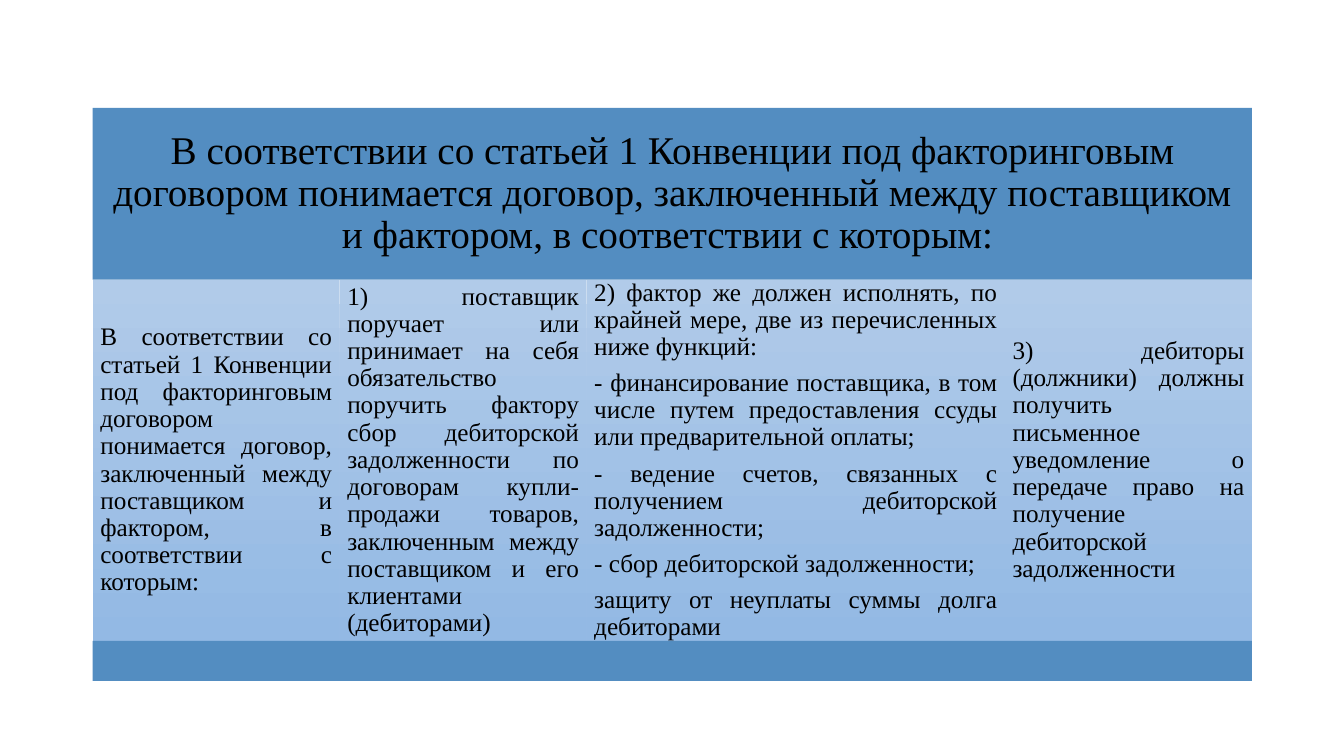
from pptx import Presentation
from pptx.dml.color import RGBColor
from pptx.enum.shapes import MSO_SHAPE
from pptx.enum.text import MSO_ANCHOR, MSO_AUTO_SIZE, PP_ALIGN
from pptx.util import Pt

COLORS = {"band": "538DC1", "column_top": "B1CBE9", "column_bottom": "93B9E4", "text": "000000"}
FONT = "Times New Roman"
LEFT, WIDTH = 66.24, 828
HEADER_TOP, COLUMN_TOP, FOOTER_TOP, FOOTER_BOTTOM = 77, 199.8, 457.7, 486.4

DEFINITION = (
    "В соответствии со статьей 1 Конвенции под факторинговым договором понимается "
    "договор, заключенный между поставщиком и фактором, в соответствии с которым: "
)
# Width and paragraphs of each column
COLUMNS = [
    (176.4, [DEFINITION]),
    (176.4, [
        "1) поставщик поручает или принимает на себя обязательство поручить фактору "
        "сбор дебиторской задолженности по договорам купли-продажи товаров, "
        "заключенным между поставщиком и его клиентами (дебиторами)",
    ]),
    (298.8, [
        "2) фактор же должен исполнять, по крайней мере, две из перечисленных ниже функций: ",
        "- финансирование поставщика, в том числе путем предоставления ссуды "
        "или предварительной оплаты;",
        "- ведение счетов, связанных с получением дебиторской задолженности; ",
        "- сбор дебиторской задолженности;",
        "защиту от неуплаты суммы долга дебиторами",
    ]),
    (176.4, [
        "3) дебиторы (должники) должны получить письменное уведомление о передаче "
        "право на получение дебиторской задолженности",
    ]),
]


def add_block(slide, left, top, width, height):
    shape = slide.shapes.add_shape(
        MSO_SHAPE.RECTANGLE, Pt(left), Pt(top), Pt(width), Pt(height))
    shape.shadow.inherit = False
    shape.line.fill.background()
    return shape


def write_text(shape, paragraphs, size, alignment, margin):
    frame = shape.text_frame
    frame.text = "\n".join(paragraphs)
    frame.word_wrap = True
    frame.auto_size = MSO_AUTO_SIZE.NONE
    frame.vertical_anchor = MSO_ANCHOR.MIDDLE
    frame.margin_left = frame.margin_right = Pt(margin)
    frame.margin_top = frame.margin_bottom = Pt(margin)
    for paragraph in frame.paragraphs:
        paragraph.alignment = alignment
        paragraph.line_spacing = 0.9
        paragraph.space_before = Pt(0)
        paragraph.space_after = Pt(size * 0.35)
        for run in paragraph.runs:
            run.font.name = FONT
            run.font.size = Pt(size)
            run.font.color.rgb = RGBColor.from_string(COLORS["text"])


presentation = Presentation()
presentation.slide_width, presentation.slide_height = Pt(960), Pt(540)
slide = presentation.slides.add_slide(presentation.slide_layouts[5])

# Header band
header = slide.shapes.title
header.left, header.top = Pt(LEFT), Pt(HEADER_TOP)
header.width, header.height = Pt(WIDTH), Pt(COLUMN_TOP - HEADER_TOP)
write_text(header, [DEFINITION], 28, PP_ALIGN.CENTER, 8.4)

# Columns
left = LEFT
for width, paragraphs in COLUMNS:
    column = add_block(slide, left, COLUMN_TOP, width, FOOTER_TOP - COLUMN_TOP)
    column.fill.gradient()
    column.fill.gradient_angle = 270
    for stop, name in zip(column.fill.gradient_stops, ("column_top", "column_bottom")):
        stop.color.rgb = RGBColor.from_string(COLORS[name])
    write_text(column, paragraphs, 18, PP_ALIGN.JUSTIFY, 5.4)
    left += width

# Footer band
footer = add_block(slide, LEFT, FOOTER_TOP, WIDTH, FOOTER_BOTTOM - FOOTER_TOP)
for band in (header, footer):
    band.fill.solid()
    band.fill.fore_color.rgb = RGBColor.from_string(COLORS["band"])

presentation.save("out.pptx")
